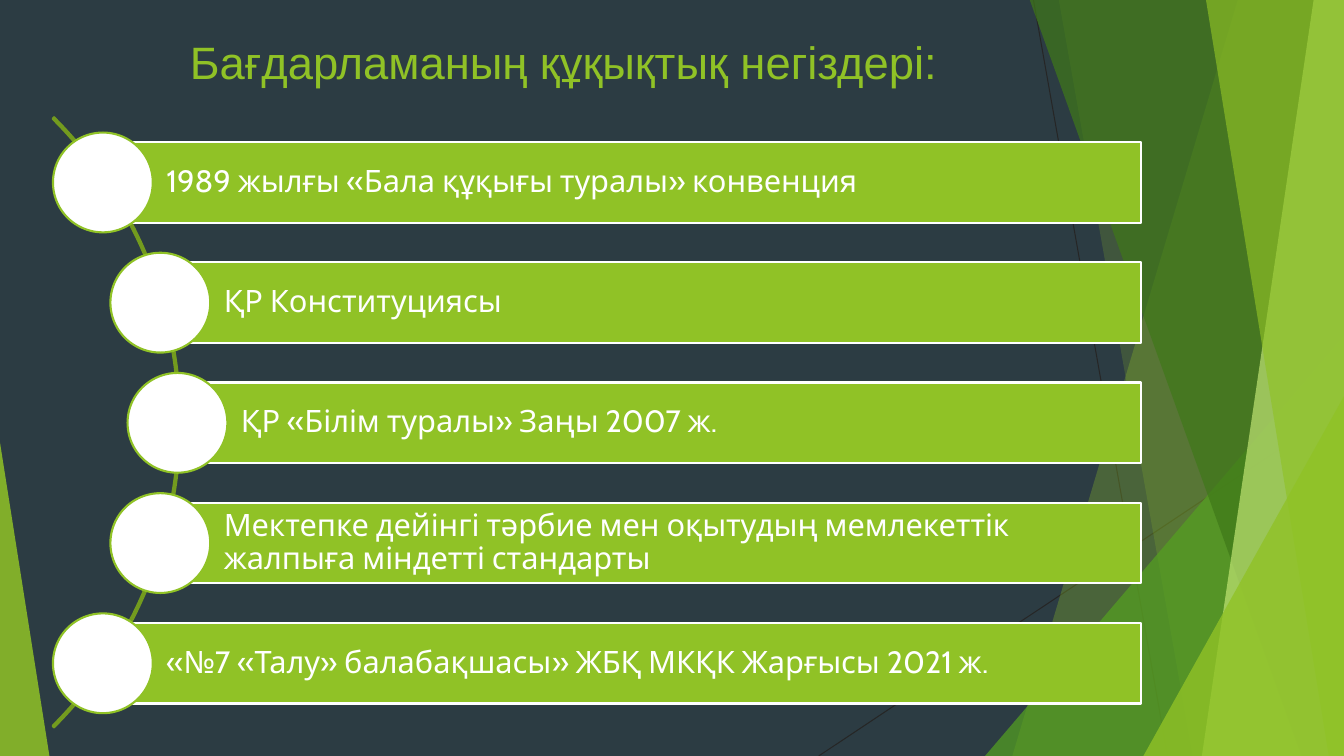
from lxml.etree import SubElement
from pptx import Presentation
from pptx.dml.color import RGBColor
from pptx.enum.shapes import MSO_CONNECTOR, MSO_SHAPE
from pptx.enum.text import MSO_ANCHOR, PP_ALIGN
from pptx.oxml.ns import qn
from pptx.util import Inches, Pt

NAVY = RGBColor(0x2C, 0x3C, 0x43)
LIME = RGBColor(0x90, 0xC2, 0x26)
GREEN = RGBColor(0x54, 0xA0, 0x21)
FOREST = RGBColor(0x3F, 0x78, 0x19)
PALE = RGBColor(0xC0, 0xE4, 0x74)
OLIVE = RGBColor(0x73, 0x9B, 0x1E)
DARK = RGBColor(0x26, 0x26, 0x26)
WHITE = RGBColor(0xFF, 0xFF, 0xFF)

WIDTH, HEIGHT = 13.33, 7.5
SLAB_TOP = -0.01
BAR_TOP, BAR_LAST_TOP, BAR_RIGHT, BAR_HEIGHT = 1.41, 6.18, 11.32, 0.8
DOT = 0.99

DOCUMENTS = [
    (1.02, "1989 жылғы «Бала құқығы туралы» конвенция"),
    (1.59, "ҚР Конституциясы"),
    (1.76, "ҚР «Білім туралы» Заңы 2007 ж."),
    (1.59, "Мектепке дейінгі тәрбие мен оқытудың мемлекеттік "
           "жалпыға міндетті стандарты"),
    (1.02, "«№7 «Талу» балабақшасы» ЖБҚ МКҚК Жарғысы 2021 ж."),
]


def paint(s, fill=None, line=None, opacity=100):
    s.shadow.inherit = False
    if fill is None:
        s.fill.background()
    else:
        s.fill.solid()
        s.fill.fore_color.rgb = fill
    if opacity < 100:
        color = s.fill._xPr.find(qn("a:solidFill"))[0]
        SubElement(color, qn("a:alpha")).set("val", str(opacity * 1000))
    if line is None:
        s.line.fill.background()
    else:
        s.line.color.rgb = line
        s.line.width = Pt(1.5)


def add_preset(slide, kind, box, adjustments=(), **look):
    s = slide.shapes.add_shape(kind, *map(Inches, box))
    for i, value in enumerate(adjustments):
        s.adjustments[i] = value
    paint(s, **look)
    return s


def add_thin_line(slide, start, end):
    s = slide.shapes.add_connector(
        MSO_CONNECTOR.STRAIGHT, *map(Inches, start + end))
    s.line.color.rgb = DARK
    s.line.width = Pt(0.75)
    SubElement(s._element.spPr, qn("a:effectLst"))


def add_slab(slide, top_x, bottom_x, fill, opacity):
    corners = [(top_x, SLAB_TOP), (WIDTH, SLAB_TOP),
               (WIDTH, HEIGHT), (bottom_x, HEIGHT)]
    points = [(Inches(x), Inches(y)) for x, y in corners]
    builder = slide.shapes.build_freeform(*points[0])
    builder.add_line_segments(points[1:], close=True)
    paint(builder.convert_to_shape(), fill=fill, opacity=opacity)


def add_wedge(slide, left, top, right, apex, fill, opacity):
    box = (left, top, right - left, HEIGHT - top)
    add_preset(slide, MSO_SHAPE.ISOSCELES_TRIANGLE, box, [apex],
               fill=fill, opacity=opacity)


def write(s, text, size, font, color, align, **frame):
    tf = s.text_frame
    frame = {"word_wrap": True, "vertical_anchor": MSO_ANCHOR.MIDDLE, **frame}
    for name, value in frame.items():
        setattr(tf, name, value)
    p = tf.paragraphs[0]
    p.alignment = align
    r = p.add_run()
    r.text = text
    for name, value in {"size": Pt(size), "name": font}.items():
        setattr(r.font, name, value)
    r.font.color.rgb = color
    return p


def add_background(slide):
    fill = slide.background.fill
    fill.solid()
    fill.fore_color.rgb = NAVY
    add_thin_line(slide, (10.25, 0), (11.58, HEIGHT))
    add_thin_line(slide, (WIDTH, 4.03), (8.12, HEIGHT))
    add_slab(slide, 12.28, 10.04, LIME, 30)
    add_slab(slide, 10.5, 11.83, LIME, 20)
    add_wedge(slide, 9.77, 3.33, WIDTH, 1, GREEN, 72)
    add_slab(slide, 10.21, 12.91, FOREST, 70)
    add_slab(slide, 13.03, 11.92, PALE, 70)
    add_slab(slide, 11.96, 13.18, LIME, 65)
    add_wedge(slide, 11.34, 3.93, WIDTH, 1, LIME, 80)
    add_wedge(slide, 0, 4.39, 0.49, 0, LIME, 85)


def add_title(slide, text):
    s = slide.shapes.add_textbox(*map(Inches, (0.89, 0.29, 9.4, 0.72)))
    write(s, text, 32.4, "Arial", LIME, PP_ALIGN.CENTER,
          margin_top=0, margin_bottom=Inches(0.08))


def add_document(slide, left, top, text):
    bar = add_preset(slide, MSO_SHAPE.RECTANGLE,
                     (left, top, BAR_RIGHT - left, BAR_HEIGHT),
                     fill=LIME, line=WHITE)
    inset = Inches(0.06)
    p = write(bar, text, 22, "Cabin", WHITE, PP_ALIGN.LEFT,
              margin_left=Inches(0.63), margin_right=inset,
              margin_top=inset, margin_bottom=inset)
    p.line_spacing = 0.9
    dot_top = top + (BAR_HEIGHT - DOT) / 2
    add_preset(slide, MSO_SHAPE.OVAL, (left - DOT / 2, dot_top, DOT, DOT),
               fill=WHITE, line=LIME)


def main():
    prs = Presentation()
    prs.slide_width, prs.slide_height = Inches(WIDTH), Inches(HEIGHT)
    slide = prs.slides.add_slide(prs.slide_layouts[6])
    add_background(slide)
    add_title(slide, "Бағдарламаның құқықтық негіздері:")
    add_preset(slide, MSO_SHAPE.BLOCK_ARC, (-6.77, -0.09, 8.56, 8.56),
               [189, 27, 0.0025], line=OLIVE)
    pitch = (BAR_LAST_TOP - BAR_TOP) / (len(DOCUMENTS) - 1)
    for i, (left, text) in enumerate(DOCUMENTS):
        add_document(slide, left, BAR_TOP + i * pitch, text)
    prs.save("out.pptx")


if __name__ == "__main__":
    main()
